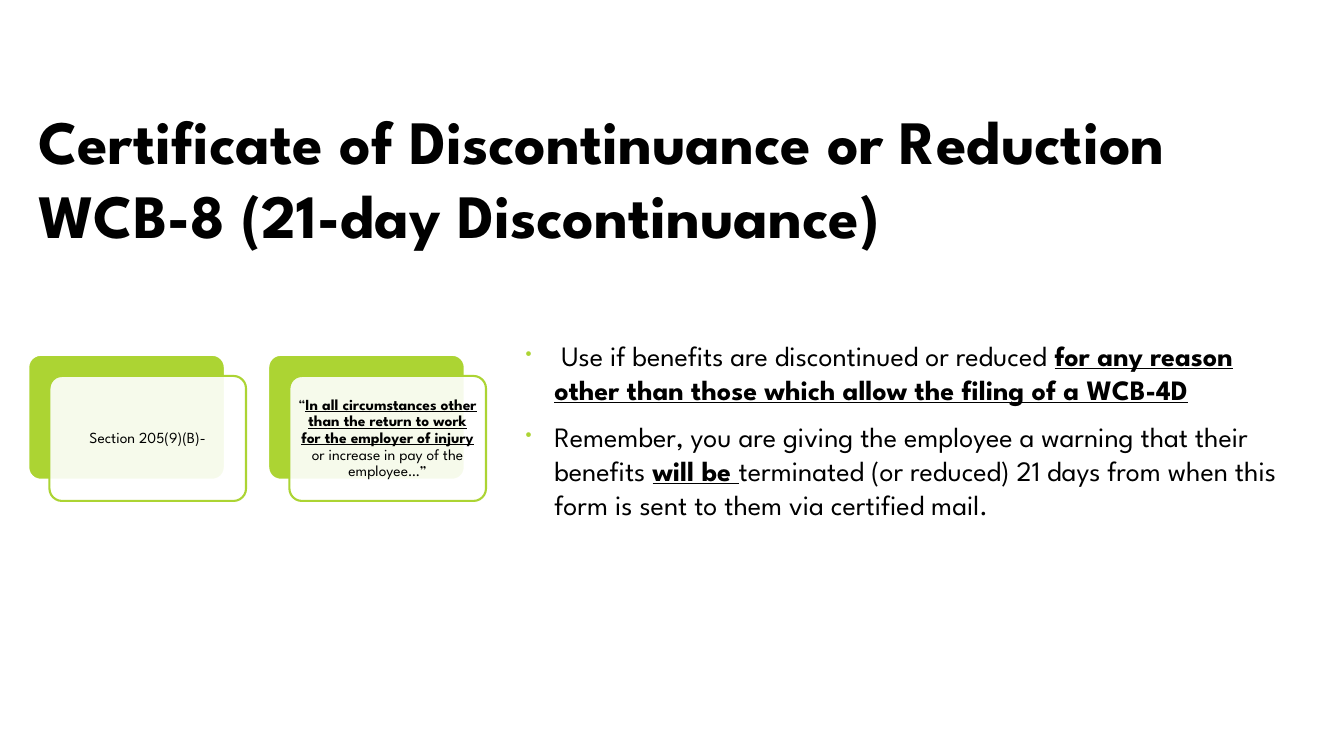
from dataclasses import dataclass

from lxml import etree
from pptx import Presentation
from pptx.dml.color import RGBColor
from pptx.enum.shapes import MSO_SHAPE
from pptx.enum.text import MSO_ANCHOR, PP_ALIGN
from pptx.oxml.ns import qn
from pptx.util import Inches, Pt

ROUNDED = MSO_SHAPE.ROUNDED_RECTANGLE
TOP, MIDDLE, BOTTOM = MSO_ANCHOR.TOP, MSO_ANCHOR.MIDDLE, MSO_ANCHOR.BOTTOM
CENTER = PP_ALIGN.CENTER


@dataclass(frozen=True)
class Theme:
    font: str = "League Spartan"
    ink: RGBColor = RGBColor(0x00, 0x00, 0x00)
    accent: RGBColor = RGBColor(0xAC, 0xD4, 0x33)
    paper: RGBColor = RGBColor(0xFF, 0xFF, 0xFF)
    title_size: int = 44
    body_size: int = 20
    card_size: int = 11


STRONG = {"bold": True, "underline": True}
PLAIN = {}


class SlideBuilder:
    def __init__(self, page, theme):
        self.page = page
        self.theme = theme

    def text_box(self, left, top, width, height, anchor, inset=None):
        """Add an empty wrapping text box and return its frame."""
        box = self.page.shapes.add_textbox(
            Inches(left), Inches(top), Inches(width), Inches(height))
        frame = box.text_frame
        settings = {"word_wrap": True, "vertical_anchor": anchor}
        if inset is not None:
            for side in ("left", "top", "right", "bottom"):
                settings[f"margin_{side}"] = Inches(inset)
        for name, value in settings.items():
            setattr(frame, name, value)
        return frame

    def add_spans(self, para, spans, size):
        """Fill a paragraph with (text, format) spans."""
        for text, extra in spans:
            span = para.add_run()
            span.text = text
            values = {"name": self.theme.font, "size": Pt(size), **extra}
            for name, value in values.items():
                setattr(span.font, name, value)
            span.font.color.rgb = self.theme.ink

    def title(self, lines, left, top, width, height):
        frame = self.text_box(left, top, width, height, BOTTOM)
        para = frame.paragraphs[0]
        for index, line in enumerate(lines):
            if index:
                para.add_line_break()
            self.add_spans(para, [(line, {"bold": True})],
                           self.theme.title_size)

    def panel(self, left, top, width, height, fill, line, opacity=100):
        shape = self.page.shapes.add_shape(
            ROUNDED, Inches(left), Inches(top), Inches(width), Inches(height))
        shape.shadow.inherit = False
        shape.adjustments[0] = 0.1
        shape.fill.solid()
        shape.fill.fore_color.rgb = fill
        shape.line.color.rgb = line
        shape.line.width = Pt(1.5)
        if opacity < 100:
            solid = shape.element.spPr.find(qn("a:solidFill"))
            etree.SubElement(solid[0], qn("a:alpha"), val=str(opacity * 1000))

    def card(self, left, top, spans):
        """Green back panel, translucent front panel and centred label."""
        width, height, shift, margin = 1.95, 1.24, 0.21, 0.035
        theme = self.theme
        front_left, front_top = left + shift, top + shift
        self.panel(left, top, width, height, theme.accent, theme.paper)
        self.panel(front_left, front_top, width, height,
                   theme.paper, theme.accent, opacity=90)
        frame = self.text_box(front_left + margin, front_top + margin,
                              width - 2 * margin, height - 2 * margin,
                              MIDDLE, inset=0.05)
        para = frame.paragraphs[0]
        para.alignment = CENTER
        para.line_spacing = 0.9
        self.add_spans(para, spans, theme.card_size)

    def bullets(self, items, left, top, width, height):
        frame = self.text_box(left, top, width, height, TOP)
        for index, spans in enumerate(items):
            para = frame.add_paragraph() if index else frame.paragraphs[0]
            self.add_bullet(para)
            if index:
                para.space_before = Pt(10)
            self.add_spans(para, spans, self.theme.body_size)

    def add_bullet(self, para):
        indent = Inches(0.31)
        properties = para._p.get_or_add_pPr()
        properties.set("marL", str(indent))
        properties.set("indent", str(-indent))
        color = etree.SubElement(properties, qn("a:buClr"))
        etree.SubElement(color, qn("a:srgbClr"), val=str(self.theme.accent))
        etree.SubElement(properties, qn("a:buSzPct"), val="80000")
        etree.SubElement(properties, qn("a:buFont"), typeface=self.theme.font)
        etree.SubElement(properties, qn("a:buChar"), char="•")


TITLE = ["Certificate of Discontinuance or Reduction",
         "WCB-8 (21-day Discontinuance)"]

CARDS = [
    [("Section 205(9)(B)-", PLAIN)],
    [("“", PLAIN),
     ("In all circumstances other than the return to work "
      "for the employer of injury ", STRONG),
     ("or increase in pay of the employee…”", PLAIN)],
]

BULLETS = [
    [(" Use if benefits are discontinued or reduced ", PLAIN),
     ("for any reason other than those which allow the filing of a WCB-4D",
      STRONG)],
    [("Remember, you are giving the employee a warning that their benefits ",
      PLAIN),
     ("will be ", STRONG),
     ("terminated (or reduced) 21 days from when this form is sent to them "
      "via certified mail.", PLAIN)],
]


def main():
    deck = Presentation()
    deck.slide_width, deck.slide_height = Inches(13.33), Inches(7.5)
    page = deck.slides.add_slide(deck.slide_layouts[6])
    builder = SlideBuilder(page, Theme())

    # Heading
    builder.title(TITLE, 0.28, 0.08, 13.05, 2.46)

    # Statute cards, left to right
    for index, spans in enumerate(CARDS):
        builder.card(0.28 + index * 2.38, 3.52, spans)

    # Guidance
    builder.bullets(BULLETS, 5.09, 3.31, 7.89, 3.29)

    deck.save("out.pptx")


if __name__ == "__main__":
    main()
